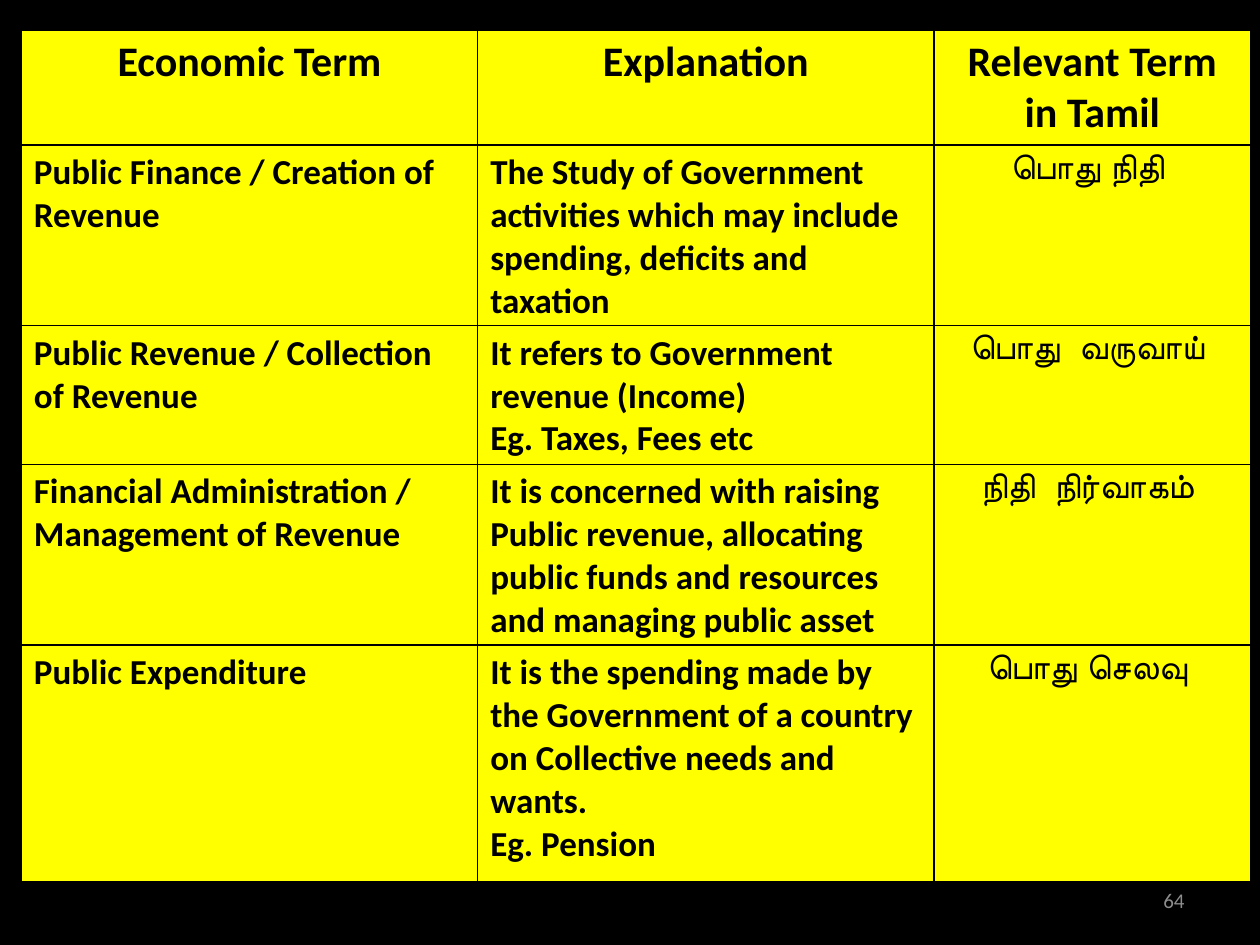
from dataclasses import dataclass

import pptx
import pptx.dml.color
import pptx.enum.text
import pptx.oxml
import pptx.oxml.ns
import pptx.util

Cm = pptx.util.Cm
Pt = pptx.util.Pt
RGB = pptx.dml.color.RGBColor
ALIGN = pptx.enum.text.PP_ALIGN


@dataclass(frozen=True)
class Theme:
    font: str = "Calibri"
    background: str = "000000"
    cell: str = "FFFF00"
    ink: str = "000000"
    border: str = "000000"
    number: str = "8C8C8C"
    header_size: int = 24
    body_size: int = 20
    number_size: int = 12
    border_width: int = 1


THEME = Theme()
COLUMN_WIDTHS = (9.2, 9.2, 6.38)
ROW_HEIGHTS = (2.31, 3.48, 2.69, 3.48, 4.78)
TERMS = (
    ("Economic Term", "Explanation", "Relevant Term in Tamil"),
    ("Public Finance / Creation of Revenue",
     "The Study of Government activities which may include spending, "
     "deficits and taxation",
     "பொது நிதி "),
    ("Public Revenue / Collection of Revenue",
     "It refers to Government revenue (Income)\nEg. Taxes, Fees etc",
     "பொது  வருவாய் "),
    ("Financial Administration / Management of Revenue",
     "It is concerned with raising Public revenue, allocating public funds "
     "and resources and managing public asset",
     "நிதி  நிர்வாகம் "),
    ("Public Expenditure",
     "It is the spending made by the Government of a country on Collective "
     "needs and wants.\nEg. Pension",
     "பொது செலவு "),
)


def write(frame, text, size, color, align, bold=False):
    frame.text = text
    for paragraph in frame.paragraphs:
        paragraph.alignment = align
        for run in paragraph.runs:
            run.font.name = THEME.font
            run.font.size = Pt(size)
            run.font.bold = bold
            run.font.color.rgb = RGB.from_string(color)


def add_borders(cell):
    """Put the four side lines ahead of the cell's fill, as the schema asks."""
    properties = cell._tc.get_or_add_tcPr()
    for position, side in enumerate(("lnL", "lnR", "lnT", "lnB")):
        properties.insert(position, pptx.oxml.parse_xml(
            f'<a:{side} {pptx.oxml.ns.nsdecls("a")} w="{Pt(THEME.border_width)}">'
            f'<a:solidFill><a:srgbClr val="{THEME.border}"/></a:solidFill>'
            f'</a:{side}>'))


def add_terms_table(slide):
    terms = slide.shapes.add_table(
        len(ROW_HEIGHTS), len(COLUMN_WIDTHS), Cm(0.43), Cm(0.61),
        Cm(sum(COLUMN_WIDTHS)), Cm(sum(ROW_HEIGHTS))).table
    for column, width in zip(terms.columns, COLUMN_WIDTHS):
        column.width = Cm(width)
    for row, height in zip(terms.rows, ROW_HEIGHTS):
        row.height = Cm(height)
    for r, row_texts in enumerate(TERMS):
        for c, text in enumerate(row_texts):
            cell = terms.cell(r, c)
            cell.fill.solid()
            cell.fill.fore_color.rgb = RGB.from_string(THEME.cell)
            add_borders(cell)
            centred = r == 0 or c == 2
            write(cell.text_frame, text,
                  THEME.header_size if r == 0 else THEME.body_size, THEME.ink,
                  ALIGN.CENTER if centred else ALIGN.LEFT, bold=True)


def add_page_number(slide, number):
    frame = slide.shapes.add_textbox(
        Cm(18.2), Cm(17.65), Cm(5.93), Cm(1.01)).text_frame
    frame.word_wrap = True
    frame.vertical_anchor = pptx.enum.text.MSO_ANCHOR.MIDDLE
    write(frame, number, THEME.number_size, THEME.number, ALIGN.RIGHT)


def main():
    deck = pptx.Presentation()
    deck.slide_width, deck.slide_height = Cm(25.4), Cm(19.05)
    slide = deck.slides.add_slide(deck.slide_layouts[6])
    slide.background.fill.solid()
    slide.background.fill.fore_color.rgb = RGB.from_string(THEME.background)
    add_page_number(slide, "64")
    add_terms_table(slide)
    deck.save("out.pptx")


if __name__ == "__main__":
    main()
